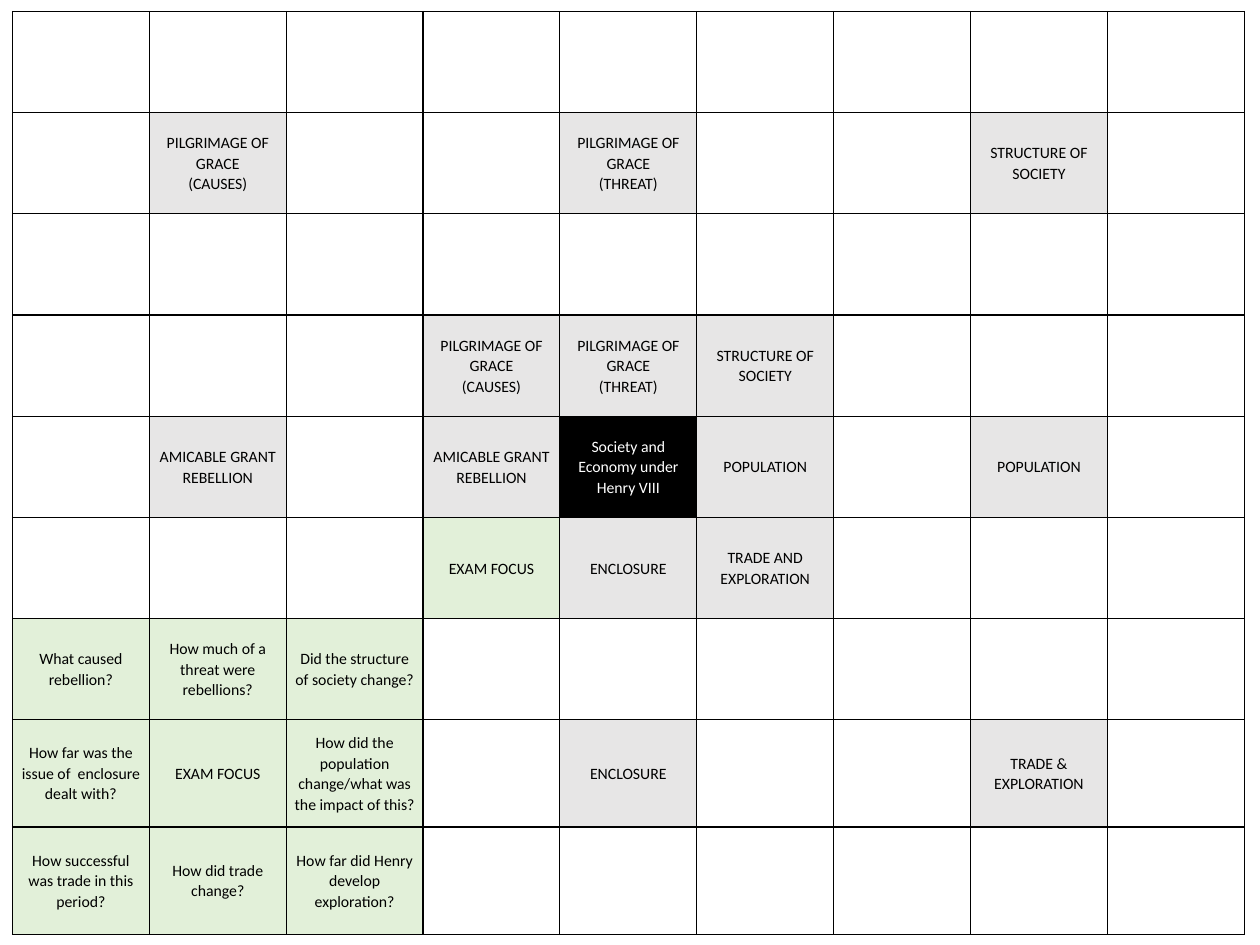
"""Build a nine by nine topic grid on society and economy under Henry VIII."""
from lxml import etree
from pptx import Presentation
from pptx.dml.color import RGBColor
from pptx.enum.text import MSO_ANCHOR as Anchor, PP_ALIGN as Align
from pptx.oxml.ns import qn
from pptx.util import Cm, Pt

BLACK = RGBColor(0x00, 0x00, 0x00)
WHITE = RGBColor(0xFF, 0xFF, 0xFF)
GREY = RGBColor(0xE7, 0xE6, 0xE6)
GREEN = RGBColor(0xE2, 0xF0, 0xD9)

SIZE = 9
COLUMN_WIDTH = 2.76
ROW_HEIGHTS = [2.04] * 7 + [2.16] * 2
CENTRE = (4, 4)

INNER_TOPICS = {
    (3, 3): "PILGRIMAGE OF GRACE\n(CAUSES)",
    (3, 4): "PILGRIMAGE OF GRACE\n(THREAT)",
    (3, 5): "STRUCTURE OF SOCIETY",
    (4, 3): "AMICABLE GRANT REBELLION",
    (4, 5): "POPULATION",
    (5, 3): "EXAM FOCUS",
    (5, 4): "ENCLOSURE",
    (5, 5): "TRADE AND EXPLORATION",
}
QUESTIONS = [
    ["What caused rebellion?", "How much of a threat were rebellions?",
     "Did the structure of society change?"],
    ["How far was the issue of  enclosure dealt with?", "EXAM FOCUS",
     "How did the population change/what was the impact of this?"],
    ["How successful was trade in this period?", "How did trade change?",
     "How far did Henry develop exploration?"],
]

contents = {CENTRE: ("Society and Economy under Henry VIII", BLACK)}
for (row, column), topic in INNER_TOPICS.items():
    fill = GREEN if topic == "EXAM FOCUS" else GREY
    contents[row, column] = (topic, fill)
    block_middle = (3 * (row - 3) + 1, 3 * (column - 3) + 1)
    contents[block_middle] = (topic.replace(" AND ", " & "), fill)
for row, questions in enumerate(QUESTIONS, start=6):
    for column, question in enumerate(questions):
        contents[row, column] = (question, GREEN)


def add_borders(cell):
    properties = cell._tc.get_or_add_tcPr()
    for side in ("a:lnL", "a:lnR", "a:lnT", "a:lnB"):
        line = etree.SubElement(properties, qn(side), w=str(Pt(0.75)))
        solid = etree.SubElement(line, qn("a:solidFill"))
        etree.SubElement(solid, qn("a:srgbClr"), val=str(BLACK))


deck = Presentation()
deck.slide_width, deck.slide_height = Cm(25.4), Cm(19.05)
page = deck.slides.add_slide(deck.slide_layouts[6])
frame = page.shapes.add_table(SIZE, SIZE, Cm(0.25), Cm(0.23),
                              Cm(COLUMN_WIDTH * SIZE), Cm(sum(ROW_HEIGHTS)))
grid = frame.table
grid.first_row = False
grid.horz_banding = False
for column in grid.columns:
    column.width = Cm(COLUMN_WIDTH)
for row, height in zip(grid.rows, ROW_HEIGHTS):
    row.height = Cm(height)

for row in range(SIZE):
    for column in range(SIZE):
        cell = grid.cell(row, column)
        add_borders(cell)
        if (row, column) not in contents:
            cell.fill.background()
            continue
        text, fill = contents[row, column]
        cell.fill.solid()
        cell.fill.fore_color.rgb = fill
        cell.vertical_anchor = Anchor.MIDDLE
        cell.margin_left = cell.margin_right = Cm(0.15)
        cell.margin_top = cell.margin_bottom = 0
        para = cell.text_frame.paragraphs[0]
        para.text = text
        para.alignment = Align.CENTER
        para.line_spacing = 1.07
        for span in para.runs:
            span.font.name = "Calibri"
            span.font.size = Pt(9)
            span.font.color.rgb = WHITE if fill == BLACK else BLACK

deck.save("out.pptx")
